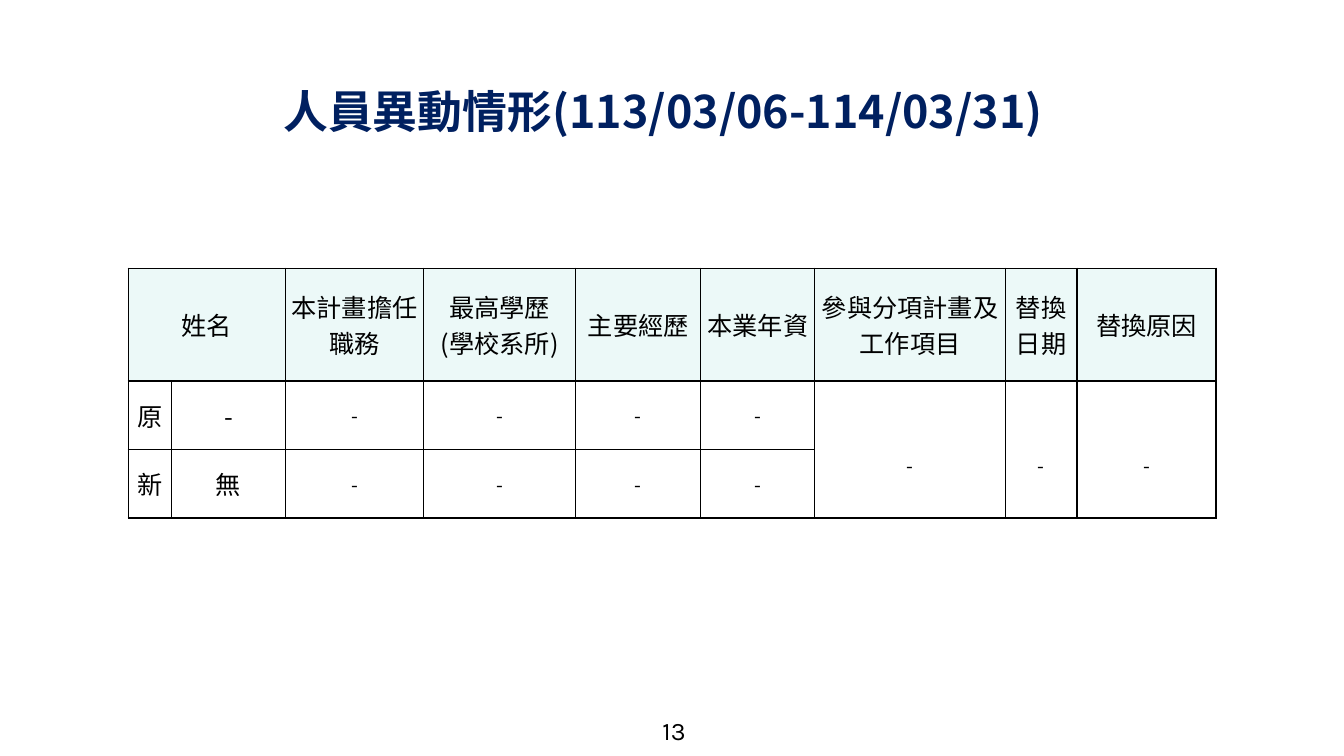
from dataclasses import dataclass

from lxml.etree import SubElement
from pptx import Presentation
from pptx.dml.color import RGBColor
from pptx.enum.text import MSO_ANCHOR, MSO_AUTO_SIZE, PP_ALIGN
from pptx.oxml import parse_xml
from pptx.oxml.ns import nsdecls, qn
from pptx.util import Emu, Inches, Pt

WIDTH, HEIGHT = Inches(13.33), Inches(7.5)


@dataclass(frozen=True)
class Theme:
    cjk: str = "Noto Sans CJK SC"
    latin: str = "Karla"
    navy: str = "002060"
    black: str = "000000"
    white: str = "FFFFFF"
    mint: str = "ECF9F8"
    title_pt: int = 32
    body_pt: int = 18
    dash_pt: int = 14


@dataclass(frozen=True)
class Entry:
    row: int
    col: int
    text: str
    size: int
    row_span: int = 1
    col_span: int = 1
    top_inset: float = 0


THEME = Theme()

# Percentages of the slide's width and height
COLUMNS = (3.23, 8.48, 10.28, 11.33, 9.3, 8.48, 14.18, 5.33, 10.35)
ROWS = (14.93, 9.07, 9.07)

HEADINGS = ("本計畫擔任職務", "最高學歷\n(學校系所)", "主要經歷", "本業年資",
            "參與分項計畫及工作項目", "替換日期", "替換原因")
ENTRIES = [
    Entry(0, 0, "姓名", THEME.body_pt, col_span=2),
    *(Entry(0, col, text, THEME.body_pt) for col, text in enumerate(HEADINGS, 2)),
    Entry(1, 0, "原", THEME.body_pt),
    Entry(1, 1, "-", THEME.body_pt),
    Entry(2, 0, "新", THEME.body_pt),
    Entry(2, 1, "無", THEME.body_pt),
    *(Entry(row, col, "-", THEME.dash_pt) for row in (1, 2) for col in range(2, 6)),
    *(Entry(1, col, "-", THEME.dash_pt, row_span=2, top_inset=4) for col in (6, 7, 8)),
]


def across(percent: float) -> Emu:
    return Emu(round(WIDTH * percent / 100))


def down(percent: float) -> Emu:
    return Emu(round(HEIGHT * percent / 100))


def write(tf, text: str, size: int, font: str, color: str,
          align: PP_ALIGN = PP_ALIGN.CENTER, bold: bool = False) -> None:
    """Fill a text frame, using the font for Latin and East Asian letters."""
    tf.text = text
    for p in tf.paragraphs:
        p.alignment = align
        p.font.size = Pt(size)
        p.font.bold = bold
        p.font.color.rgb = RGBColor.from_string(color)
        p.font.name = font
        props = p._p.pPr.find(qn("a:defRPr"))
        SubElement(props, qn("a:ea")).set("typeface", font)


def add_borders(cell) -> None:
    tc_pr = cell._tc.get_or_add_tcPr()
    for i, side in enumerate("LRTB"):
        tc_pr.insert(i, parse_xml(
            f'<a:ln{side} {nsdecls("a")} w="{Pt(1)}"><a:solidFill>'
            f'<a:srgbClr val="{THEME.black}"/></a:solidFill></a:ln{side}>'))


def add_title(slide) -> None:
    sp = slide.shapes.title
    sp.left, sp.top = across(20.33), down(10.4)
    sp.width, sp.height = across(59.64), down(8.53)
    tf = sp.text_frame
    write(tf, "人員異動情形(113/03/06-114/03/31)", THEME.title_pt, THEME.cjk,
          THEME.navy, PP_ALIGN.LEFT, bold=True)
    tf.word_wrap = False
    tf.auto_size = MSO_AUTO_SIZE.NONE
    tf.vertical_anchor = MSO_ANCHOR.MIDDLE


def add_staff_table(slide) -> None:
    table = slide.shapes.add_table(
        len(ROWS), len(COLUMNS), across(9.53), down(35.47),
        across(sum(COLUMNS)), down(sum(ROWS))).table
    table.first_row = table.horz_banding = False
    for column, share in zip(table.columns, COLUMNS):
        column.width = across(share)
    for row, share in zip(table.rows, ROWS):
        row.height = down(share)
    for i, row in enumerate(table.rows):
        for cell in row.cells:
            cell.fill.solid()
            cell.fill.fore_color.rgb = RGBColor.from_string(
                THEME.white if i else THEME.mint)
            cell.margin_left = cell.margin_right = Inches(0.02)
            cell.margin_top = cell.margin_bottom = 0
            cell.vertical_anchor = MSO_ANCHOR.MIDDLE
            add_borders(cell)
    for entry in ENTRIES:
        cell = table.cell(entry.row, entry.col)
        if entry.row_span * entry.col_span > 1:
            cell.merge(table.cell(entry.row + entry.row_span - 1,
                                  entry.col + entry.col_span - 1))
        cell.margin_top = down(entry.top_inset)
        write(cell.text_frame, entry.text, entry.size, THEME.cjk, THEME.black)


def add_page_number(slide) -> None:
    tf = slide.shapes.add_textbox(
        across(48.39), down(94), across(3.53), down(5.33)).text_frame
    tf.word_wrap = True
    write(tf, "13", THEME.body_pt, THEME.latin, THEME.black)


def main() -> None:
    prs = Presentation()
    prs.slide_width, prs.slide_height = WIDTH, HEIGHT
    slide = prs.slides.add_slide(prs.slide_layouts.get_by_name("Title Only"))
    add_page_number(slide)
    add_title(slide)
    add_staff_table(slide)
    prs.save("out.pptx")


if __name__ == "__main__":
    main()
